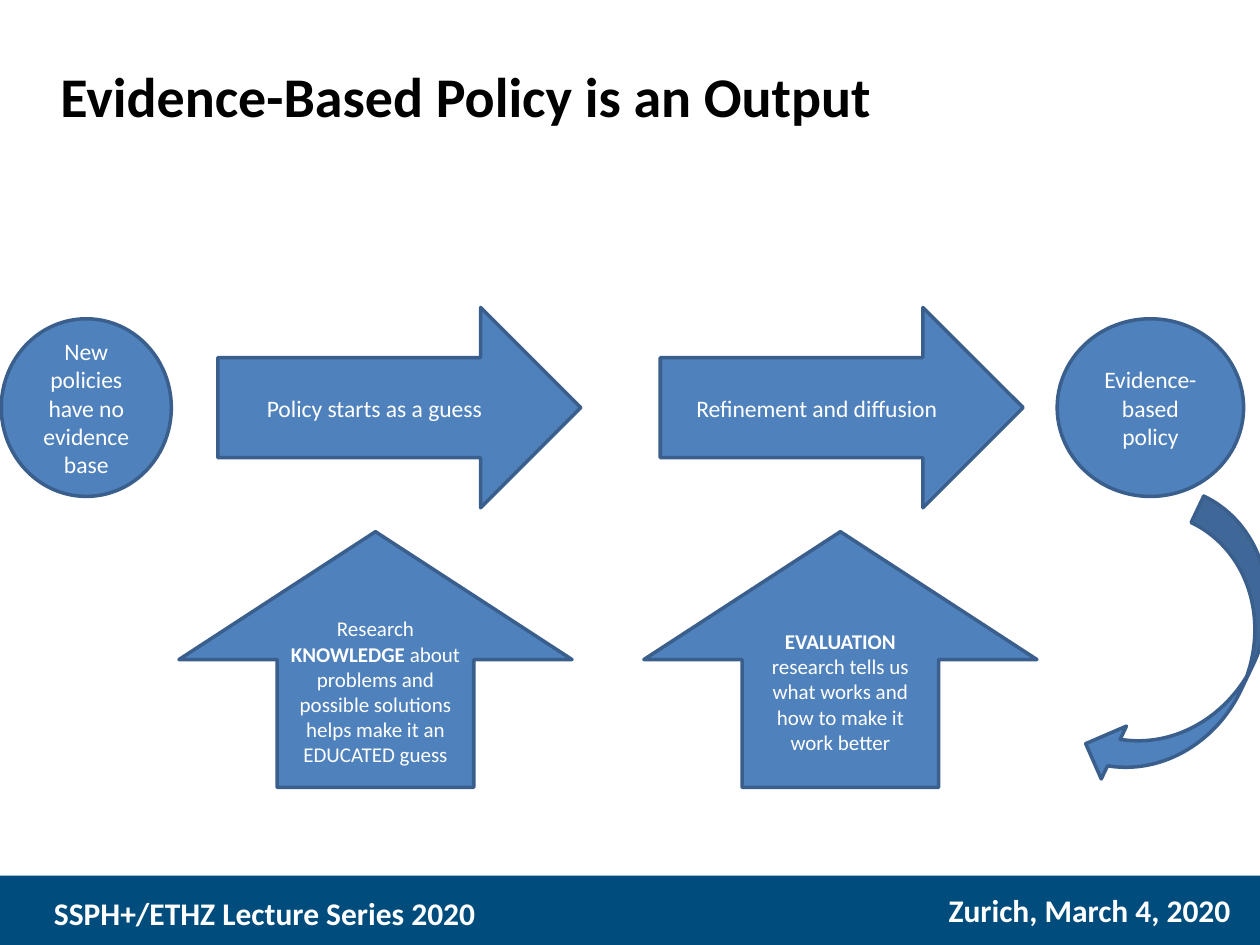
from dataclasses import dataclass
from pptx import Presentation
from pptx.dml.color import RGBColor
from pptx.enum.shapes import MSO_SHAPE
from pptx.enum.text import MSO_ANCHOR, PP_ALIGN
from pptx.util import Pt

PX = 9144


@dataclass(frozen=True)
class Theme:
    font: str = "Calibri"
    blue: str = "4F81BD"
    edge: str = "3A5F8C"
    navy: str = "004C7D"
    white: str = "FFFFFF"
    black: str = "000000"
    head: float = 32
    foot: float = 18
    step: float = 13.5
    note: float = 12


class Deck:
    def __init__(self, theme):
        self.theme = theme
        self.prs = Presentation()
        self.prs.slide_width = 1000 * PX
        self.prs.slide_height = 750 * PX
        self.slide = self.prs.slides.add_slide(self.prs.slide_layouts[5])

    def fill_text(self, frame, runs, size, color, align, bold=None):
        para = frame.paragraphs[0]
        para.alignment = align
        for text, strong in runs:
            run = para.add_run()
            run.text = text
            if strong:
                run.font.bold = True
        font = para.font
        font.name, font.size, font.bold = self.theme.font, Pt(size), bold
        font.color.rgb = RGBColor.from_string(color)

    def title(self, box, text):
        shape = self.slide.shapes.title
        shape.left, shape.top, shape.width, shape.height = (n * PX for n in box)
        frame = shape.text_frame
        frame.vertical_anchor = MSO_ANCHOR.TOP
        frame.word_wrap = True
        self.fill_text(frame, [(text, False)], self.theme.head,
                       self.theme.black, PP_ALIGN.LEFT, True)

    def label(self, box, text):
        shape = self.slide.shapes.add_textbox(*(n * PX for n in box))
        shape.text_frame.word_wrap = False
        self.fill_text(shape.text_frame, [(text, False)], self.theme.foot,
                       self.theme.white, PP_ALIGN.LEFT, True)

    def band(self, box):
        shape = self.slide.shapes.add_shape(
            MSO_SHAPE.RECTANGLE, *(n * PX for n in box))
        shape.shadow.inherit = False
        shape.fill.solid()
        shape.fill.fore_color.rgb = RGBColor.from_string(self.theme.navy)
        shape.line.fill.background()

    def block(self, kind, box, runs=(), size=None, turn=0):
        shape = self.slide.shapes.add_shape(kind, *(n * PX for n in box))
        shape.shadow.inherit = False
        shape.rotation = turn
        shape.fill.solid()
        shape.fill.fore_color.rgb = RGBColor.from_string(self.theme.blue)
        shape.line.color.rgb = RGBColor.from_string(self.theme.edge)
        shape.line.width = Pt(2)
        if runs:
            frame = shape.text_frame
            frame.word_wrap = True
            frame.vertical_anchor = MSO_ANCHOR.MIDDLE
            self.fill_text(frame, runs, size, self.theme.white,
                           PP_ALIGN.CENTER)


def main():
    theme = Theme()
    deck = Deck(theme)
    deck.band((0, 695, 1000, 55))
    deck.label((33, 705, 364, 40), "SSPH+/ETHZ Lecture Series 2020")
    deck.label((743, 702, 246, 40), "Zurich, March 4, 2020")
    deck.title((38, 44, 784, 64), "Evidence-Based Policy is an Output")

    for left, width, text in (
        (1, 135, "New policies have no evidence base"),
        (839, 148, "Evidence-based policy"),
    ):
        deck.block(MSO_SHAPE.OVAL, (left, 253, width, 141),
                   [(text, False)], theme.step)

    for left, text in (
        (173, "Policy starts as a guess"),
        (524, "Refinement and diffusion"),
    ):
        deck.block(MSO_SHAPE.RIGHT_ARROW, (left, 244, 288, 159),
                   [(text, False)], theme.step)

    for left, runs in (
        (142, [("Research ", False), ("KNOWLEDGE", True),
               (" about problems and possible solutions helps make it "
                "an EDUCATED guess", False)]),
        (511, [("EVALUATION ", True),
               ("research tells us what works and how to make it "
                "work better", False)]),
    ):
        deck.block(MSO_SHAPE.UP_ARROW, (left, 422, 312, 203), runs, theme.note)

    deck.block(MSO_SHAPE.CURVED_LEFT_ARROW, (899, 402, 93, 241), turn=25.5)
    deck.prs.save("out.pptx")


if __name__ == "__main__":
    main()
